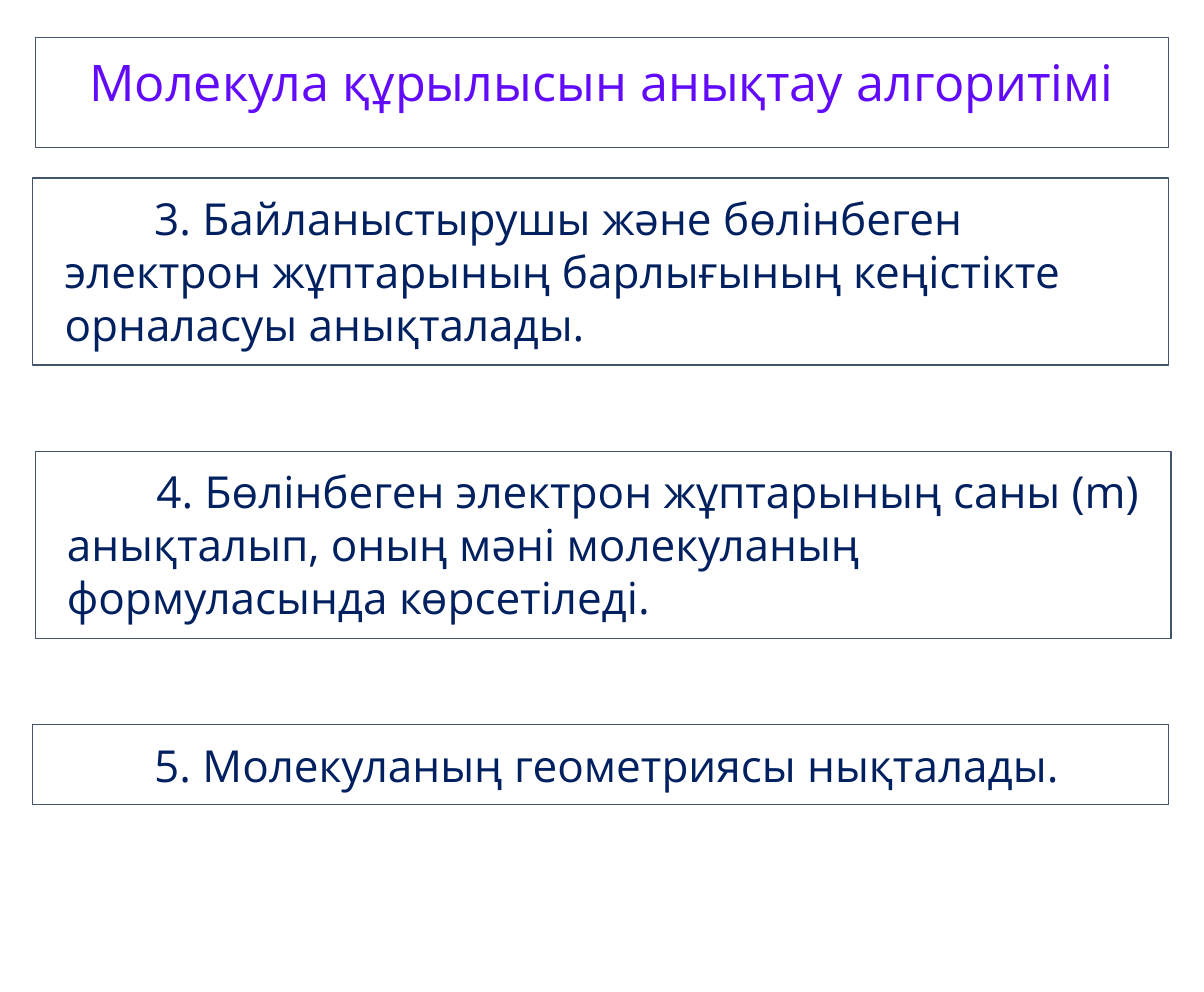
from dataclasses import dataclass

from pptx import Presentation
from pptx.dml.color import RGBColor
from pptx.enum.shapes import MSO_SHAPE
from pptx.enum.text import MSO_ANCHOR, MSO_AUTO_SIZE, PP_ALIGN
from pptx.util import Inches, Pt

HEADING = "Молекула құрылысын анықтау алгоритімі"
STEPS = [
    (0.29, 3, "3. Байланыстырушы және бөлінбеген электрон жұптарының "
              "барлығының кеңістікте орналасуы анықталады."),
    (0.31, 3, "4. Бөлінбеген электрон жұптарының саны (m) анықталып, "
              "оның мәні молекуланың формуласында көрсетіледі."),
    (0.29, 1, "5. Молекуланың геометриясы нықталады."),
]


@dataclass(frozen=True)
class Theme:
    font: str = "Open Sans"
    heading_size: int = 32
    step_size: int = 28
    heading_color: str = "620BFC"
    step_color: str = "002060"
    border_color: str = "44546A"
    border_width: float = 0.75


THEME = Theme()
PAD_X, PAD_Y = 0.28, 0.12
FIRST_TOP, STEP_PITCH = 1.57, 2.41
STEP_WIDTH, LINE_HEIGHT = 10.02, 0.47
FIRST_LINE_INDENT = 0.79


def fill_box(box, text, size, color, align):
    box.fill.background()
    box.line.color.rgb = RGBColor.from_string(THEME.border_color)
    box.line.width = Pt(THEME.border_width)
    frame = box.text_frame
    frame.word_wrap = True
    frame.auto_size = MSO_AUTO_SIZE.SHAPE_TO_FIT_TEXT
    frame.vertical_anchor = MSO_ANCHOR.TOP
    frame.margin_left = frame.margin_right = Inches(PAD_X)
    frame.margin_top = frame.margin_bottom = Inches(PAD_Y)
    paragraph = frame.paragraphs[0]
    paragraph.alignment = align
    run = paragraph.add_run()
    run.text = text
    run.font.name = THEME.font
    run.font.size = Pt(size)
    run.font.color.rgb = RGBColor.from_string(color)
    return paragraph


def main():
    deck = Presentation()
    deck.slide_width, deck.slide_height = Inches(10.62), Inches(8.75)
    slide = deck.slides.add_slide(deck.slide_layouts[5])

    heading = slide.shapes.title
    heading.left, heading.top = Inches(0.31), Inches(0.33)
    heading.width, heading.height = Inches(10), Inches(0.78)
    fill_box(heading, HEADING, THEME.heading_size, THEME.heading_color,
             PP_ALIGN.CENTER)

    for index, (left, lines, text) in enumerate(STEPS):
        step = slide.shapes.add_shape(
            MSO_SHAPE.RECTANGLE, Inches(left),
            Inches(FIRST_TOP + index * STEP_PITCH),
            Inches(STEP_WIDTH), Inches(2 * PAD_Y + lines * LINE_HEIGHT))
        step.shadow.inherit = False
        paragraph = fill_box(step, text, THEME.step_size, THEME.step_color,
                             PP_ALIGN.LEFT)
        paragraph._p.get_or_add_pPr().set(
            "indent", str(Inches(FIRST_LINE_INDENT)))

    deck.save("out.pptx")


if __name__ == "__main__":
    main()
